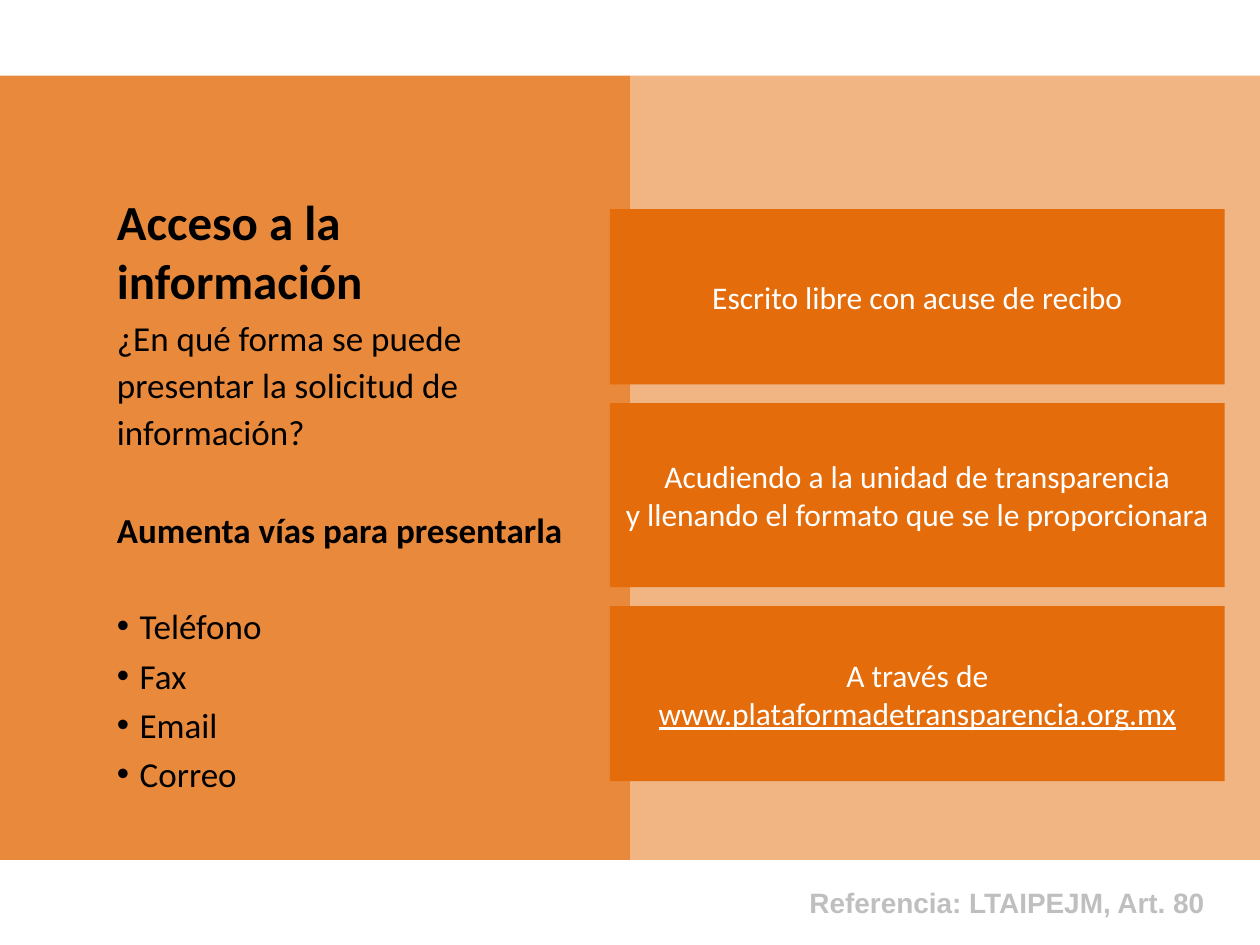
from dataclasses import dataclass

from lxml.etree import SubElement
from pptx import Presentation
from pptx.dml.color import RGBColor as Rgb
from pptx.enum.shapes import MSO_SHAPE as Preset
from pptx.enum.text import MSO_ANCHOR as Anchor, PP_ALIGN as Align
from pptx.oxml.ns import qn
from pptx.util import Inches, Pt

SLIDE_W, SLIDE_H = 10, 7.5


@dataclass(frozen=True)
class Theme:
    orange: str = "E46C0A"
    white: str = "FFFFFF"
    black: str = "000000"
    grey: str = "BFBFBF"
    body_font: str = "Calibri"
    reference_font: str = "Arial"
    title: int = 28
    body: int = 20
    option: int = 18
    reference: int = 16
    line: float = 26.8
    before: float = 1.4
    bullet_indent: float = 0.18


THEME = Theme()

QUESTION = "¿En qué forma se puede presentar la solicitud de información?"
CHANNELS = ("Teléfono", "Fax", "Email", "Correo")
OPTIONS = (
    (1.39, [["Escrito libre con acuse de recibo"]]),
    (1.46, [["Acudiendo a la unidad de transparencia"],
            ["y llenando el formato que se le proporcionara"]]),
    (1.39, [["A través de ", "www.plataformadetransparencia.org.mx"]]),
)


def style(run, size, color, font=THEME.body_font, bold=False):
    run.font.size = Pt(size)
    run.font.name = font
    run.font.bold = bold
    run.font.color.rgb = Rgb.from_string(color)


def add_block(slide, left, top, width, height, opacity=100):
    block = slide.shapes.add_shape(
        Preset.RECTANGLE, *map(Inches, (left, top, width, height)))
    block.shadow.inherit = False
    block.line.fill.background()
    block.fill.solid()
    block.fill.fore_color.rgb = Rgb.from_string(THEME.orange)
    if opacity < 100:
        color = block.fill._xPr.find(f"{qn('a:solidFill')}/{qn('a:srgbClr')}")
        SubElement(color, qn("a:alpha"), val=str(opacity * 1000))
    return block


def add_text_area(slide, left, top, width, height, wrap=True):
    area = slide.shapes.add_textbox(*map(Inches, (left, top, width, height)))
    area.text_frame.word_wrap = wrap
    return area.text_frame


def add_body_line(frame, text, bold=False, skipped_lines=0):
    line = frame.add_paragraph()
    line.text = text
    line.line_spacing = Pt(THEME.line)
    line.space_before = Pt(THEME.before + skipped_lines * THEME.line)
    style(line.runs[0], THEME.body, THEME.black, bold=bold)
    return line


def add_bullet(line):
    properties = line._p.get_or_add_pPr()
    indent = Inches(THEME.bullet_indent)
    properties.set("marL", str(indent))
    properties.set("indent", str(-indent))
    SubElement(properties, qn("a:buFont"), typeface=THEME.reference_font)
    SubElement(properties, qn("a:buChar"), char="•")


def add_request_panel(slide):
    frame = add_text_area(slide, 0.83, 1.47, 3.78, 4.93)
    heading = frame.paragraphs[0]
    heading.text = "Acceso a la información"
    style(heading.runs[0], THEME.title, THEME.black, bold=True)
    add_body_line(frame, QUESTION)
    add_body_line(frame, "Aumenta vías para presentarla", True, skipped_lines=1.05)
    for index, channel in enumerate(CHANNELS):
        add_bullet(add_body_line(frame, channel, skipped_lines=int(index == 0)))


def add_option(slide, top, height, lines):
    option = add_block(slide, 4.84, top, 4.88, height)
    frame = option.text_frame
    frame.word_wrap = True
    frame.vertical_anchor = Anchor.MIDDLE
    frame.text = "\n".join("" for _ in lines)
    for paragraph, pieces in zip(frame.paragraphs, lines):
        paragraph.alignment = Align.CENTER
        for piece in pieces:
            run = paragraph.add_run()
            run.text = piece
            style(run, THEME.option, THEME.white)
            if piece.startswith("www."):
                run.font.underline = True


def add_options(slide, top=1.66, gap=0.15):
    for height, lines in OPTIONS:
        add_option(slide, top, height, lines)
        top += height + gap


def add_reference(slide):
    frame = add_text_area(slide, 6.28, 6.98, 3.38, 0.37, wrap=False)
    reference = frame.paragraphs[0]
    reference.text = "Referencia: LTAIPEJM, Art. 80"
    reference.alignment = Align.RIGHT
    style(reference.runs[0], THEME.reference, THEME.grey,
          THEME.reference_font, bold=True)


def main():
    deck = Presentation()
    deck.slide_width, deck.slide_height = Inches(SLIDE_W), Inches(SLIDE_H)
    slide = deck.slides.add_slide(deck.slide_layouts[6])
    half, band_top, band_height = SLIDE_W / 2, SLIDE_H * 0.08, SLIDE_H * 0.83
    add_block(slide, half, band_top, half, band_height, opacity=50)
    add_block(slide, 0, band_top, half, band_height, opacity=80)
    add_reference(slide)
    add_request_panel(slide)
    add_options(slide)
    deck.save("out.pptx")


if __name__ == "__main__":
    main()
